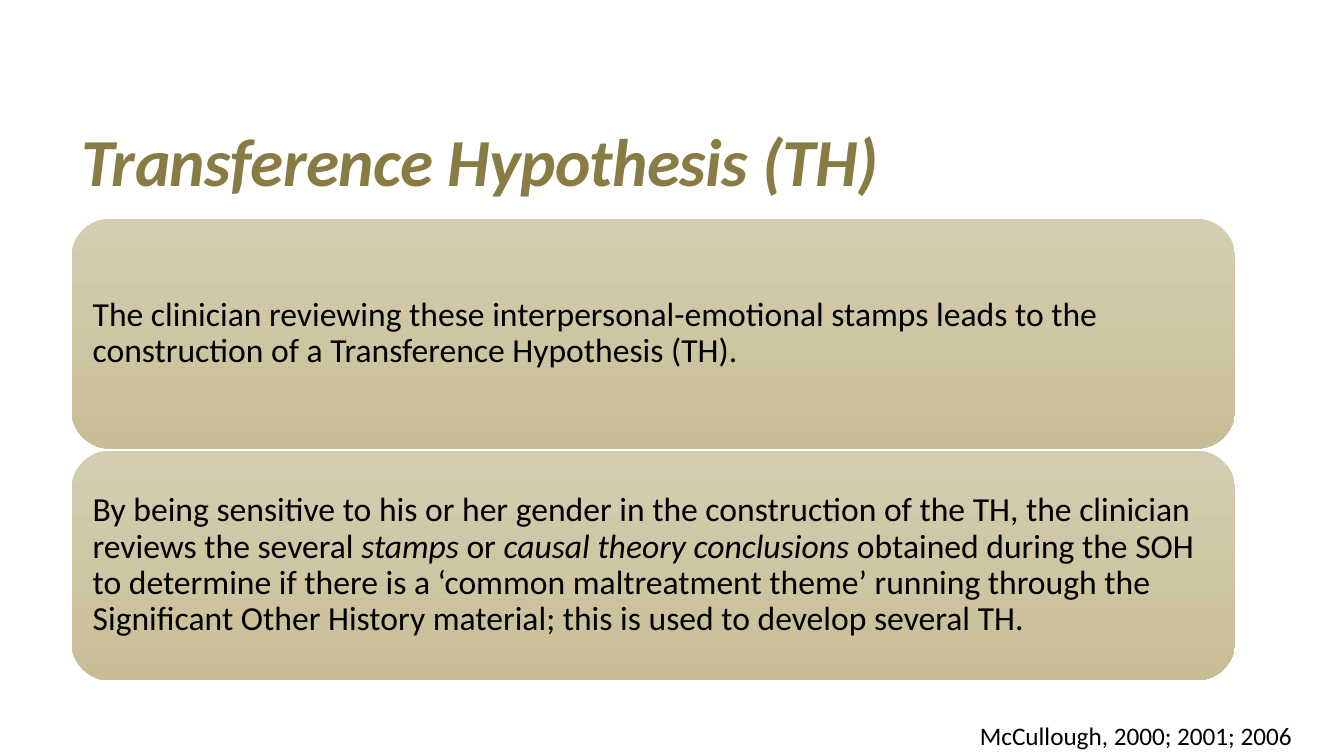
from dataclasses import dataclass

from pptx import Presentation
from pptx.dml.color import RGBColor
from pptx.enum.shapes import MSO_SHAPE
from pptx.enum.text import MSO_ANCHOR, MSO_AUTO_SIZE, PP_ALIGN
from pptx.slide import Slide
from pptx.text.text import _Paragraph as Para, _Run as Run
from pptx.util import Inches, Pt


@dataclass(frozen=True)
class Theme:
    font: str = "Calibri"
    gold: RGBColor = RGBColor(0x88, 0x7C, 0x44)
    ink: RGBColor = RGBColor(0, 0, 0)
    light: RGBColor = RGBColor(0xD5, 0xCD, 0xB1)
    dark: RGBColor = RGBColor(0xC8, 0xBE, 0x95)
    head: int = 48
    body: int = 24
    cite: int = 18


@dataclass(frozen=True)
class Phrase:
    text: str
    italic: bool = False


@dataclass(frozen=True)
class Card:
    phrases: tuple[Phrase, ...]


THEME = Theme()
LEFT, WIDTH = 0.71, 11.54
TOP, HIGH, STEP = 2.17, 2.28, 2.3

CARDS = (
    Card((
        Phrase("The clinician reviewing these interpersonal-emotional stamps "
               "leads to the construction of a Transference Hypothesis (TH)."),
    )),
    Card((
        Phrase("By being sensitive to his or her gender in the construction "
               "of the TH, the clinician reviews the several "),
        Phrase("stamps", True),
        Phrase(" or "),
        Phrase("causal theory conclusions", True),
        Phrase(" obtained during the SOH to determine if there is a ‘common "
               "maltreatment theme’ running through the Significant Other "
               "History material; this is used to develop several TH."),
    )),
)


def add_run(para: Para, phrase: Phrase, size: int, color: RGBColor) -> Run:
    run = para.add_run()
    run.text = phrase.text
    font = run.font
    font.name, font.size, font.italic = THEME.font, Pt(size), phrase.italic
    font.color.rgb = color
    return run


def add_title(slide: Slide) -> None:
    title = slide.shapes.title
    title.left, title.top = Inches(LEFT), Inches(0.4)
    title.width, title.height = Inches(WIDTH), Inches(1.64)
    frame = title.text_frame
    frame.auto_size = MSO_AUTO_SIZE.NONE
    frame.vertical_anchor = MSO_ANCHOR.BOTTOM
    para = frame.paragraphs[0]
    para.alignment, para.line_spacing = PP_ALIGN.LEFT, 0.9
    run = add_run(para, Phrase("Transference Hypothesis (TH)", True),
                  THEME.head, THEME.gold)
    run.font.bold = True
    run.font._element.set("spc", "-40")


def add_card(slide: Slide, card: Card, top: float) -> None:
    box = slide.shapes.add_shape(
        MSO_SHAPE.ROUNDED_RECTANGLE, Inches(LEFT), Inches(top),
        Inches(WIDTH), Inches(HIGH))
    box.shadow.inherit = False
    box.line.fill.background()
    box.fill.gradient()
    box.fill.gradient_angle = 270
    for stop, color in zip(box.fill.gradient_stops, (THEME.light, THEME.dark)):
        stop.color.rgb = color
    frame = box.text_frame
    frame.word_wrap = True
    frame.vertical_anchor = MSO_ANCHOR.MIDDLE
    frame.margin_left = frame.margin_right = Inches(0.1)
    frame.margin_top = frame.margin_bottom = Inches(0.1)
    para = frame.paragraphs[0]
    para.alignment, para.line_spacing = PP_ALIGN.LEFT, 0.9
    for phrase in card.phrases:
        add_run(para, phrase, THEME.body, THEME.ink)


def add_cite(slide: Slide) -> None:
    box = slide.shapes.add_textbox(
        Inches(9.62), Inches(7.1), Inches(3.71), Inches(0.4))
    frame = box.text_frame
    frame.word_wrap = False
    frame.auto_size = MSO_AUTO_SIZE.SHAPE_TO_FIT_TEXT
    para = frame.paragraphs[0]
    para.alignment = PP_ALIGN.LEFT
    add_run(para, Phrase("McCullough, 2000; 2001; 2006"),
            THEME.cite, THEME.ink)


def main() -> None:
    deck = Presentation()
    deck.slide_width, deck.slide_height = Inches(13.33), Inches(7.5)
    slide = deck.slides.add_slide(deck.slide_layouts.get_by_name("Title Only"))
    add_title(slide)
    for row, card in enumerate(CARDS):
        add_card(slide, card, TOP + row * STEP)
    add_cite(slide)
    deck.save("out.pptx")


if __name__ == "__main__":
    main()
